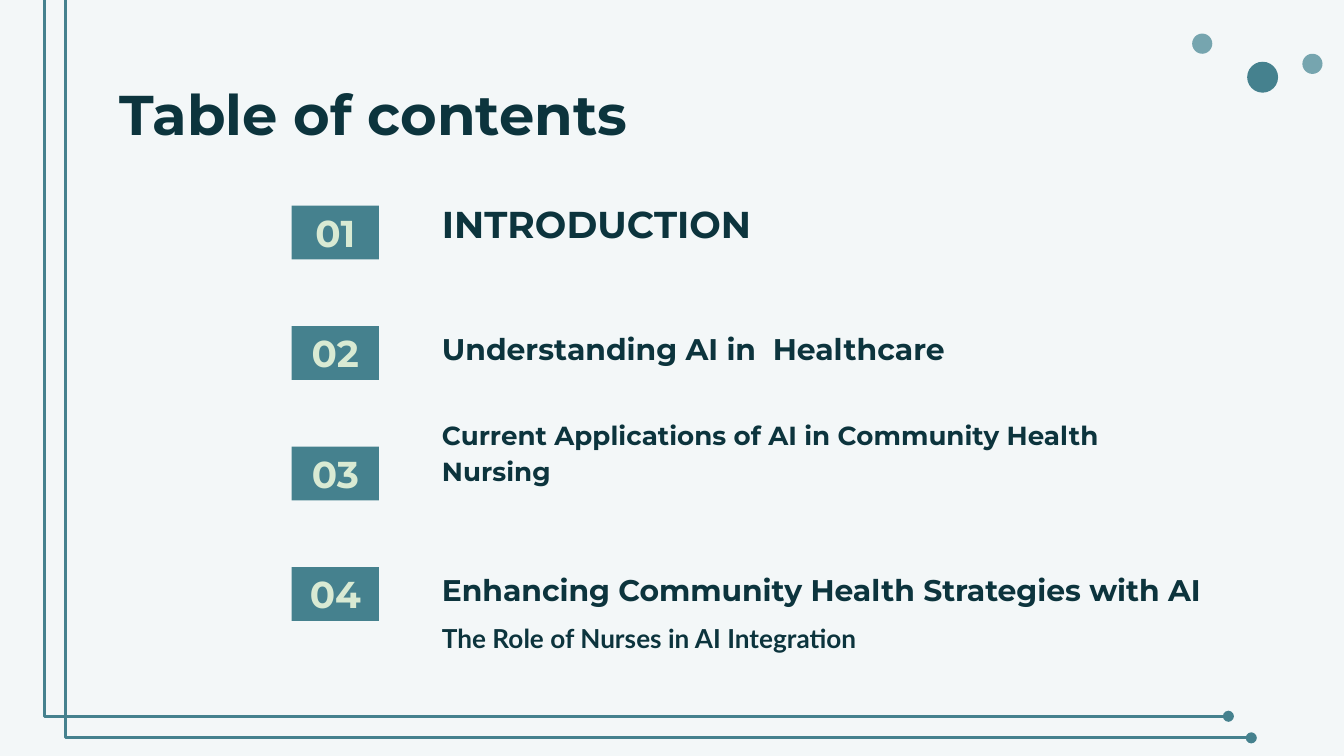
"""Build a table of contents slide with four numbered topics."""
from lxml.etree import SubElement
from pptx import Presentation
from pptx.dml.color import RGBColor
from pptx.enum.shapes import MSO_SHAPE
from pptx.enum.text import MSO_ANCHOR, PP_ALIGN
from pptx.oxml.ns import qn
from pptx.util import Inches, Pt

PALE = RGBColor(0xF3, 0xF7, 0xF8)
TEAL = RGBColor(0x45, 0x81, 0x8E)
MIST = RGBColor(0x76, 0xA5, 0xAF)
DARK = RGBColor(0x0C, 0x34, 0x3D)
MINT = RGBColor(0xD9, 0xEA, 0xD3)

TITLE = "Table of contents"
TOPICS = [
    ("INTRODUCTION", 20, 4.64),
    ("Understanding AI in  Healthcare", 16, 4.64),
    ("Current Applications of AI in Community Health Nursing", 14, 5.85),
    ("Enhancing Community Health Strategies with AI", 16, 5.85),
]
NOTE = "The Role of Nurses in AI Integration"
DOTS = [(9.28, 0.46, 0.23, TEAL), (8.87, 0.25, 0.15, MIST), (9.69, 0.4, 0.15, MIST)]
RAILS = [(0.33, 5.33, 9.14), (0.49, 5.49, 9.31)]
TOP, LAST, HIGH = 1.53, 4.22, 0.4
STEP = (LAST - TOP) / (len(TOPICS) - 1)
WIDE = Inches(10)
SIZE = {"slide_width": WIDE, "slide_height": WIDE * 9 // 16}
FRAME = {"word_wrap": True, "margin_left": Inches(0.1), "margin_right": Inches(0.1),
         "margin_top": Inches(0.1), "margin_bottom": Inches(0.1)}


def apply(item, values):
    for name, value in values.items():
        setattr(item, name, value)


def write(shape, text, size, color=DARK, face="Montserrat",
          anchor=MSO_ANCHOR.TOP, align=PP_ALIGN.LEFT, space=1.0):
    frame = shape.text_frame
    apply(frame, {**FRAME, "vertical_anchor": anchor})
    para = frame.paragraphs[0]
    apply(para, {"alignment": align, "line_spacing": space})
    run = para.add_run()
    run.text = text
    apply(run.font, {"name": face, "size": Pt(size), "bold": True})
    run.font.color.rgb = color


def label(shapes, box, text, size, **style):
    write(shapes.add_textbox(*map(Inches, box)), text, size, **style)


def block(shapes, kind, box, color):
    shape = shapes.add_shape(kind, *map(Inches, box))
    shape.shadow.inherit = False
    shape.fill.solid()
    shape.fill.fore_color.rgb = color
    shape.line.fill.background()
    return shape


def rail(shapes, left, base, end):
    path = shapes.build_freeform(Inches(left), 0, scale=1.0)
    path.add_line_segments([(Inches(left), Inches(base)), (Inches(end), Inches(base))],
                           close=False)
    shape = path.convert_to_shape()
    shape.shadow.inherit = False
    shape.fill.background()
    shape.line.color.rgb = TEAL
    shape.line.width = Pt(1.5)
    SubElement(shape.element.spPr.find(qn("a:ln")), qn("a:tailEnd"), type="oval")


def main():
    deck = Presentation()
    apply(deck, SIZE)
    slide = deck.slides.add_slide(deck.slide_layouts[6])
    slide.background.fill.solid()
    slide.background.fill.fore_color.rgb = PALE
    shapes = slide.shapes
    for left, top, size, color in DOTS:
        block(shapes, MSO_SHAPE.OVAL, (left, top, size, size), color)
    for line in RAILS:
        rail(shapes, *line)
    label(shapes, (0.79, 0.49, 8.43, 0.63), TITLE, 30)
    for row, (text, size, width) in enumerate(TOPICS):
        top = TOP + row * STEP
        badge = block(shapes, MSO_SHAPE.RECTANGLE, (2.17, top, 0.65, HIGH), TEAL)
        write(badge, f"{row + 1:02}", 20, MINT,
              anchor=MSO_ANCHOR.MIDDLE, align=PP_ALIGN.CENTER)
        label(shapes, (3.19, top, width, HIGH), text, size,
              anchor=MSO_ANCHOR.BOTTOM, space=1.15)
    label(shapes, (3.19, 4.5, 4.64, HIGH), NOTE, 14, face="Lato", space=1.15)
    deck.save("out.pptx")


if __name__ == "__main__":
    main()
